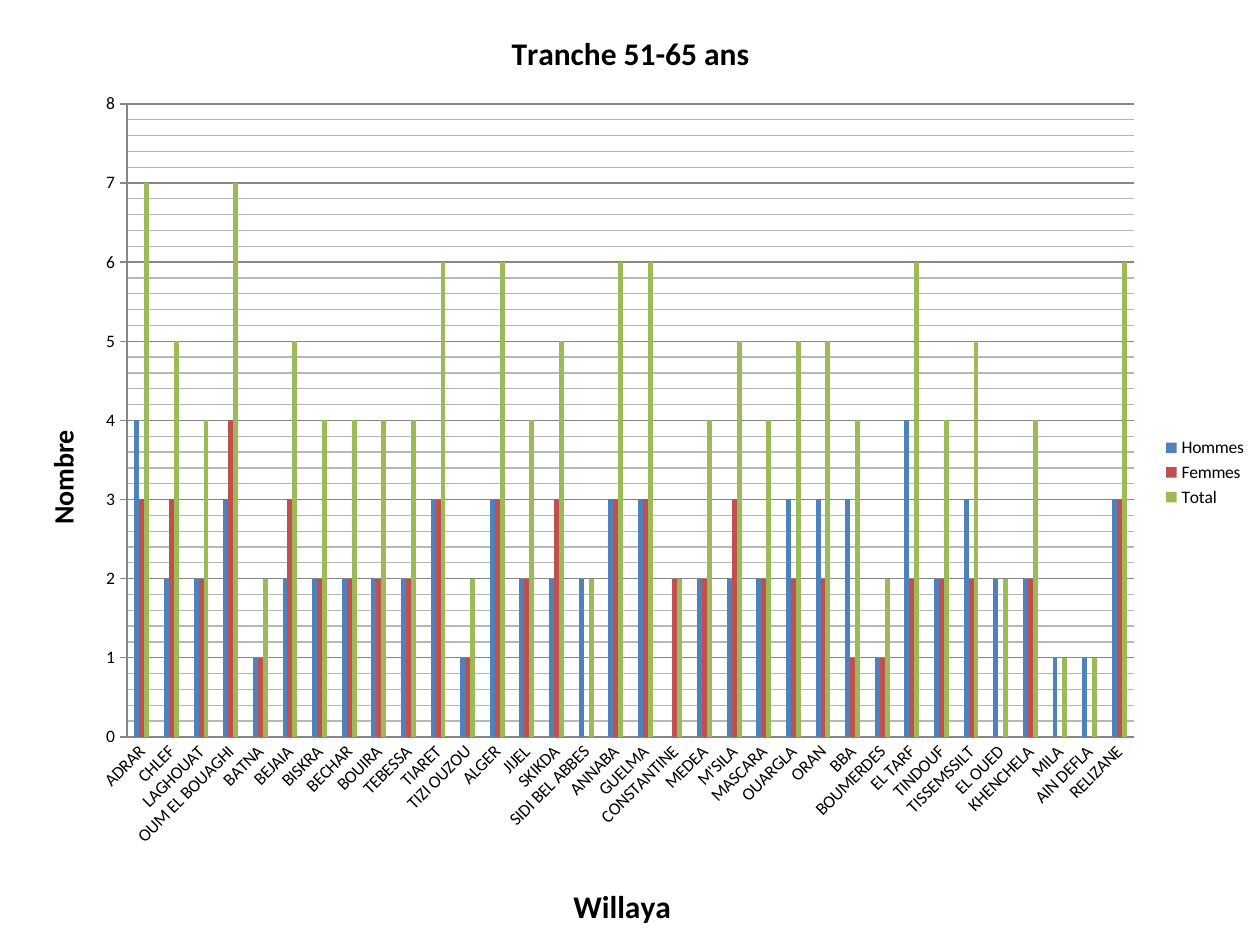
from typing import NamedTuple

from lxml import etree
from pptx import Presentation
from pptx.chart.data import CategoryChartData
from pptx.dml.color import RGBColor
from pptx.enum import chart as kinds
from pptx.oxml.ns import qn
from pptx.util import Inches, Pt

COLORS = {"text": "000000", "axis": "868686", "minor": "B7B7B7",
          "Hommes": "4F81BD", "Femmes": "C0504D", "Total": "9BBB59"}

WILAYAS = [
    "ADRAR", "CHLEF", "LAGHOUAT", "OUM EL BOUAGHI", "BATNA", "BEJAIA", "BISKRA",
    "BECHAR", "BOUIRA", "TEBESSA", "TIARET", "TIZI OUZOU", "ALGER", "JIJEL",
    "SKIKDA", "SIDI BEL ABBES", "ANNABA", "GUELMA", "CONSTANTINE", "MEDEA",
    "M'SILA", "MASCARA", "OUARGLA", "ORAN", "BBA", "BOUMERDES", "EL TARF",
    "TINDOUF", "TISSEMSSILT", "EL OUED", "KHENCHELA", "MILA", "AIN DEFLA",
    "RELIZANE",
]
MEN = [4, 2, 2, 3, 1, 2, 2, 2, 2, 2, 3, 1, 3, 2, 2, 2, 3,
       3, 0, 2, 2, 2, 3, 3, 3, 1, 4, 2, 3, 2, 2, 1, 1, 3]
WOMEN = [3, 3, 2, 4, 1, 3, 2, 2, 2, 2, 3, 1, 3, 2, 3, 0, 3,
         3, 2, 2, 3, 2, 2, 2, 1, 1, 2, 2, 2, 0, 2, 0, 0, 3]


class Heading(NamedTuple):
    owner: object
    frame: object
    words: str
    size: int
    place: dict


def rgb(name: str) -> RGBColor:
    return RGBColor.from_string(COLORS[name])


def place_part(part, position: int, layout: dict) -> None:
    """Give a chart part a manual layout, in fractions of the chart."""
    for old in part.findall(qn("c:layout")):
        part.remove(old)
    holder = etree.Element(qn("c:layout"))
    manual = etree.SubElement(holder, qn("c:manualLayout"))
    for tag, value in layout.items():
        etree.SubElement(manual, qn(f"c:{tag}")).set("val", str(value))
    part.insert(position, holder)


def write_heading(heading: Heading) -> None:
    para = heading.frame.text_frame.paragraphs[0]
    span = para.add_run()
    span.text = heading.words
    for name, value in {"size": Pt(heading.size), "bold": True,
                        "name": "Calibri"}.items():
        setattr(span.font, name, value)
    span.font.color.rgb = rgb("text")
    if heading.place:
        edges = {"xMode": "edge", "yMode": "edge"}
        place_part(heading.owner.find(qn("c:title")), 1, edges | heading.place)


def draw_line(line, color: str) -> None:
    line.color.rgb = rgb(color)
    line.width = Pt(0.75)


def format_axes(chart) -> None:
    across, up = chart.category_axis, chart.value_axis
    marks = kinds.XL_TICK_MARK
    settings = {
        across: {"major_tick_mark": marks.NONE, "minor_tick_mark": marks.NONE,
                 "has_major_gridlines": False},
        up: {"major_tick_mark": marks.OUTSIDE, "minor_tick_mark": marks.NONE,
             "has_major_gridlines": True, "has_minor_gridlines": True,
             "minimum_scale": 0, "maximum_scale": 8,
             "major_unit": 1, "minor_unit": 0.2},
    }
    for axis, values in settings.items():
        for name, value in values.items():
            setattr(axis, name, value)
        draw_line(axis.format.line, "axis")
        axis.tick_labels.font.size = Pt(10)
    draw_line(up.major_gridlines.format.line, "axis")
    minor = up._element.find(qn("c:minorGridlines"))
    shape = etree.SubElement(minor, qn("c:spPr"))
    line = etree.SubElement(shape, qn("a:ln"), w=str(Pt(0.75)))
    fill = etree.SubElement(line, qn("a:solidFill"))
    etree.SubElement(fill, qn("a:srgbClr"), val=COLORS["minor"])
    slant = across._element.find(qn("c:txPr")).find(qn("a:bodyPr"))
    slant.set("rot", str(-45 * 60000))


def add_wilaya_chart(page) -> None:
    data = CategoryChartData(number_format="General")
    data.categories = WILAYAS
    data.add_series("Hommes", MEN)
    data.add_series("Femmes", WOMEN)
    data.add_series("Total", [men + women for men, women in zip(MEN, WOMEN)])
    chart = page.shapes.add_chart(
        kinds.XL_CHART_TYPE.COLUMN_CLUSTERED, Inches(0.01), Inches(0),
        Inches(9.99), Inches(7.5), data).chart
    chart.font.name = "Calibri"
    chart.font.size = Pt(10)
    chart.font.color.rgb = rgb("text")

    plot = chart.plots[0]
    plot.gap_width = 300
    plot.overlap = 0
    plot.vary_by_categories = False
    for series in plot.series:
        series.format.fill.solid()
        series.format.fill.fore_color.rgb = rgb(series.name)

    format_axes(chart)
    across, up = chart.category_axis, chart.value_axis
    for heading in (
        Heading(None, chart.chart_title, "Tranche 51-65 ans", 18, {}),
        Heading(across._element, across.axis_title, "Willaya", 18,
                {"x": 0.45, "y": 0.93}),
        Heading(up._element, up.axis_title, "Nombre", 16,
                {"x": 0.03, "y": 0.45}),
    ):
        write_heading(heading)
    turn = up.axis_title.text_frame._txBody.find(qn("a:bodyPr"))
    turn.set("rot", str(-90 * 60000))
    turn.set("vert", "horz")

    chart.has_legend = True
    chart.legend.position = kinds.XL_LEGEND_POSITION.RIGHT
    chart.legend.include_in_layout = False
    chart.legend.font.size = Pt(10)
    place_part(chart._chartSpace.chart.plotArea, 0, {
        "layoutTarget": "inner", "xMode": "edge", "yMode": "edge",
        "x": 0.1, "y": 0.11, "w": 0.8, "h": 0.67})


def main() -> None:
    deck = Presentation()
    deck.slide_width, deck.slide_height = Inches(10), Inches(7.5)
    add_wilaya_chart(deck.slides.add_slide(deck.slide_layouts[6]))
    deck.save("out.pptx")


if __name__ == "__main__":
    main()
